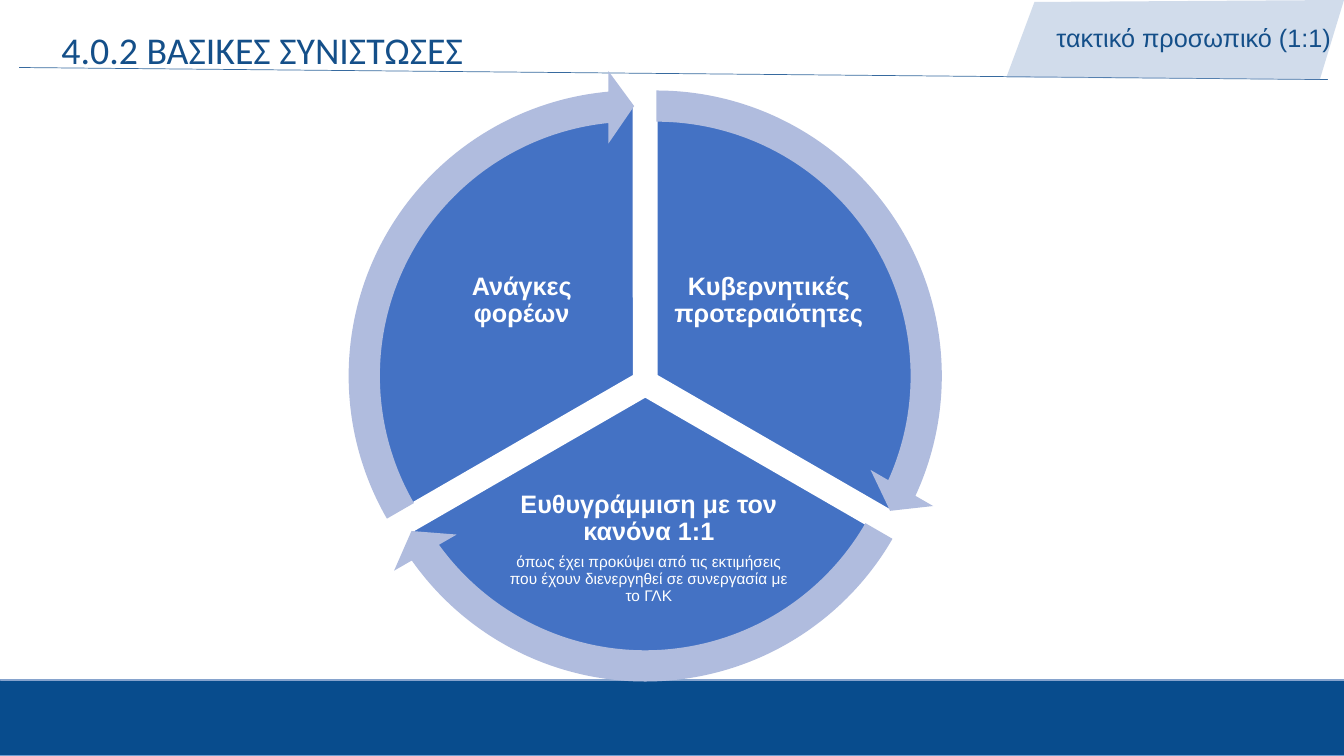
import dataclasses

import lxml.etree
import pptx
import pptx.dml.color
import pptx.enum.shapes
import pptx.enum.text
import pptx.oxml.ns
import pptx.util

Inches = pptx.util.Inches
Pt = pptx.util.Pt
SHAPES = pptx.enum.shapes.MSO_SHAPE
ALIGN = pptx.enum.text.PP_ALIGN
ANCHOR = pptx.enum.text.MSO_ANCHOR


@dataclasses.dataclass(frozen=True)
class Theme:
    """Colours, fonts and type sizes of the slide."""
    navy: str = "084C8D"
    navy_edge: str = "6F9DD0"
    stripe: str = "86A3CD"
    rule: str = "376A9F"
    ink: str = "144F89"
    tag: str = "87A4CB"
    sector: str = "4472C4"
    arrow: str = "B0BCDE"
    white: str = "FFFFFF"
    title_font: str = "Calibri"
    body_font: str = "Arial"
    title_size: float = 27
    label_size: float = 18
    note_size: float = 11


THEME = Theme()


def rgb(code):
    """Turn a hex code into a colour."""
    return pptx.dml.color.RGBColor.from_string(code)


def paint(shape, fill, line=None, width=1):
    """Give a shape its flat fill and its outline, if any."""
    shape.shadow.inherit = False
    shape.fill.solid()
    shape.fill.fore_color.rgb = rgb(fill)
    if line:
        shape.line.color.rgb = rgb(line)
        shape.line.width = Pt(width)
    else:
        shape.line.fill.background()


def add_shape(shapes, kind, box, adjustments=(), **colours):
    """Add a painted preset shape in a box given in inches."""
    shape = shapes.add_shape(kind, *map(Inches, box))
    for index, value in enumerate(adjustments):
        shape.adjustments[index] = value
    paint(shape, **colours)
    return shape


def add_text(shapes, box, lines, *, colour, font=THEME.body_font, align=ALIGN.LEFT,
             anchor=ANCHOR.TOP, insets=(0.1, 0.05), spacing=1.0, after=0):
    """Add a text box whose lines are (text, size, bold) triples."""
    frame = shapes.add_textbox(*map(Inches, box)).text_frame
    frame.word_wrap = True
    frame.vertical_anchor = anchor
    frame.margin_left = frame.margin_right = Inches(insets[0])
    frame.margin_top = frame.margin_bottom = Inches(insets[1])
    for index, (text, size, bold) in enumerate(lines):
        para = frame.add_paragraph() if index else frame.paragraphs[0]
        para.alignment = align
        para.line_spacing = spacing
        para.space_after = Pt(size * after)
        span = para.add_run()
        span.text = text
        span.font.name = font
        span.font.size = Pt(size)
        span.font.bold = bold
        span.font.color.rgb = rgb(colour)


def add_footer(page, box):
    """Draw the footer band with a thin stripe on its upper edge."""
    left, top, width, height = box
    add_shape(page.shapes, SHAPES.RECTANGLE, box, fill=THEME.navy, line=THEME.navy_edge)
    add_shape(page.shapes, SHAPES.RECTANGLE, (left + 0.03, top, width - 0.05, 0.01),
              fill=THEME.stripe, line=THEME.stripe)


def add_header(page, box, title):
    """Draw the title and the slanted rule beneath it."""
    left, top, width, height = box
    rule = page.shapes.add_connector(
        pptx.enum.shapes.MSO_CONNECTOR.STRAIGHT, Inches(left), Inches(top + 0.67),
        Inches(left + width), Inches(top + height))
    rule.line.color.rgb = rgb(THEME.rule)
    rule.line.width = Pt(0.5)
    lxml.etree.SubElement(rule._element.spPr, pptx.oxml.ns.qn("a:effectLst"))
    add_text(page.shapes, (left + 0.37, top + 0.3, 12.79, 0.46),
             [(title, THEME.title_size, False)], colour=THEME.ink,
             font=THEME.title_font, insets=(0.05, 0.05), spacing=0.8)


def add_tag(page, box, text):
    """Draw the translucent corner tag and its text."""
    left, top, width, height = box
    right, bottom = left + width, top + height
    corners = [(right - 0.24, bottom), (left, bottom - 0.02),
               (left + 0.28, top + 0.02), (right, top)]
    points = [(Inches(x), Inches(y)) for x, y in corners]
    builder = page.shapes.build_freeform(*points[0])
    builder.add_line_segments(points[1:], close=True)
    tag = builder.convert_to_shape()
    paint(tag, THEME.tag)
    colour = tag._element.spPr.find(".//" + pptx.oxml.ns.qn("a:srgbClr"))
    lxml.etree.SubElement(colour, pptx.oxml.ns.qn("a:alpha"), val="38000")
    add_text(page.shapes, (left + 0.4, top + 0.17, width - 0.4, 0.4),
             [(text, THEME.label_size, False)], colour=THEME.ink)


def add_cycle(page, box, sectors):
    """Draw equal sectors, clockwise from the top, with arrows around them."""
    left, top, size, _ = box
    group = page.shapes.add_group_shape().shapes
    margin, head, turn = 0.335, 3.275, 216
    step = turn / len(sectors)
    starts = [(turn * 0.75 + step * index) % turn for index in range(len(sectors))]
    for start, (shift, label, lines) in zip(starts, sectors):
        end = (start + step) % turn
        add_shape(group, SHAPES.PIE, (left + shift[0], top + shift[1], size, size),
                  (start, end), fill=THEME.sector, line=THEME.white, width=2)
        add_text(group, (left + label[0], top + label[1], *label[2:]), lines,
                 colour=THEME.white, align=ALIGN.CENTER, anchor=ANCHOR.MIDDLE,
                 insets=(0.03, 0.03), spacing=0.9, after=0.35)
    for start, (shift, _, _) in zip(starts, sectors):
        end = (start + step) % turn
        outer = size + 2 * margin
        add_shape(group, SHAPES.CIRCULAR_ARROW,
                  (left + shift[0] - margin, top + shift[1] - margin, outer, outer),
                  (0.051, head, end - head, start, 0.059), fill=THEME.arrow)


def main():
    """Build the slide and save it."""
    deck = pptx.Presentation()
    deck.slide_width, deck.slide_height = Inches(13.33), Inches(7.5)
    page = deck.slides.add_slide(deck.slide_layouts[6])
    add_footer(page, (-0.02, 6.74, 13.37, 0.76))
    add_header(page, (0.19, 0, 12.98, 0.79), "4.0.2 ΒΑΣΙΚΕΣ ΣΥΝΙΣΤΩΣΕΣ")
    add_tag(page, (9.98, 0, 3.35, 0.79), "τακτικό προσωπικό (1:1)")
    add_cycle(page, (3.7, 1.03, 5.4, 5.4), [
        ((0.11, 0), (2.96, 1.15, 1.93, 1.61),
         [("Κυβερνητικές προτεραιότητες", THEME.label_size, True)]),
        ((0, 0.2), (1.29, 3.7, 2.89, 1.41),
         [("Ευθυγράμμιση με τον κανόνα 1:1", THEME.label_size, True),
          ("όπως έχει προκύψει από τις εκτιμήσεις που έχουν διενεργηθεί "
           "σε συνεργασία με το ΓΛΚ", THEME.note_size, False)]),
        ((-0.11, 0), (0.51, 1.15, 1.93, 1.61),
         [("Ανάγκες φορέων", THEME.label_size, True)]),
    ])
    deck.save("out.pptx")


if __name__ == "__main__":
    main()
